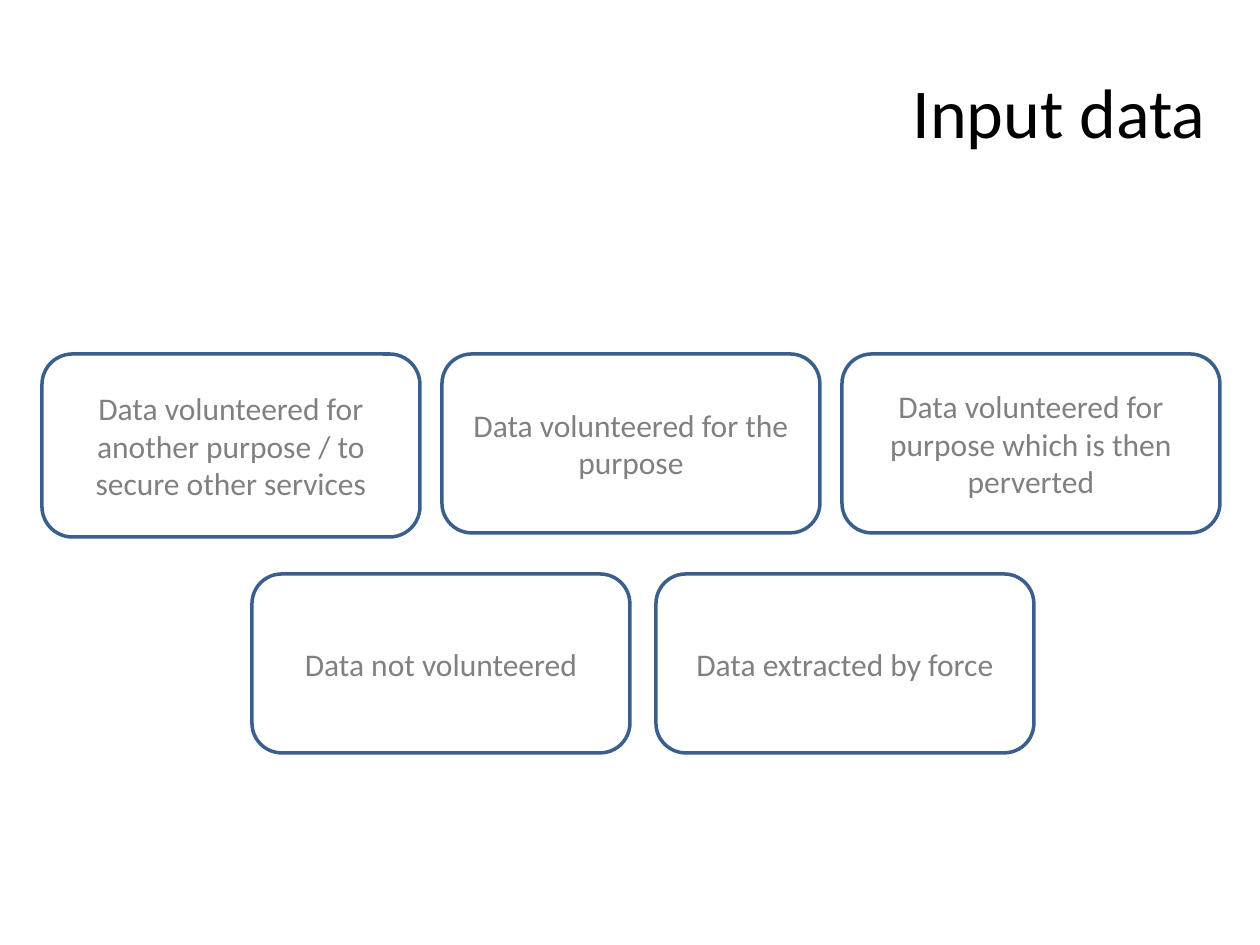
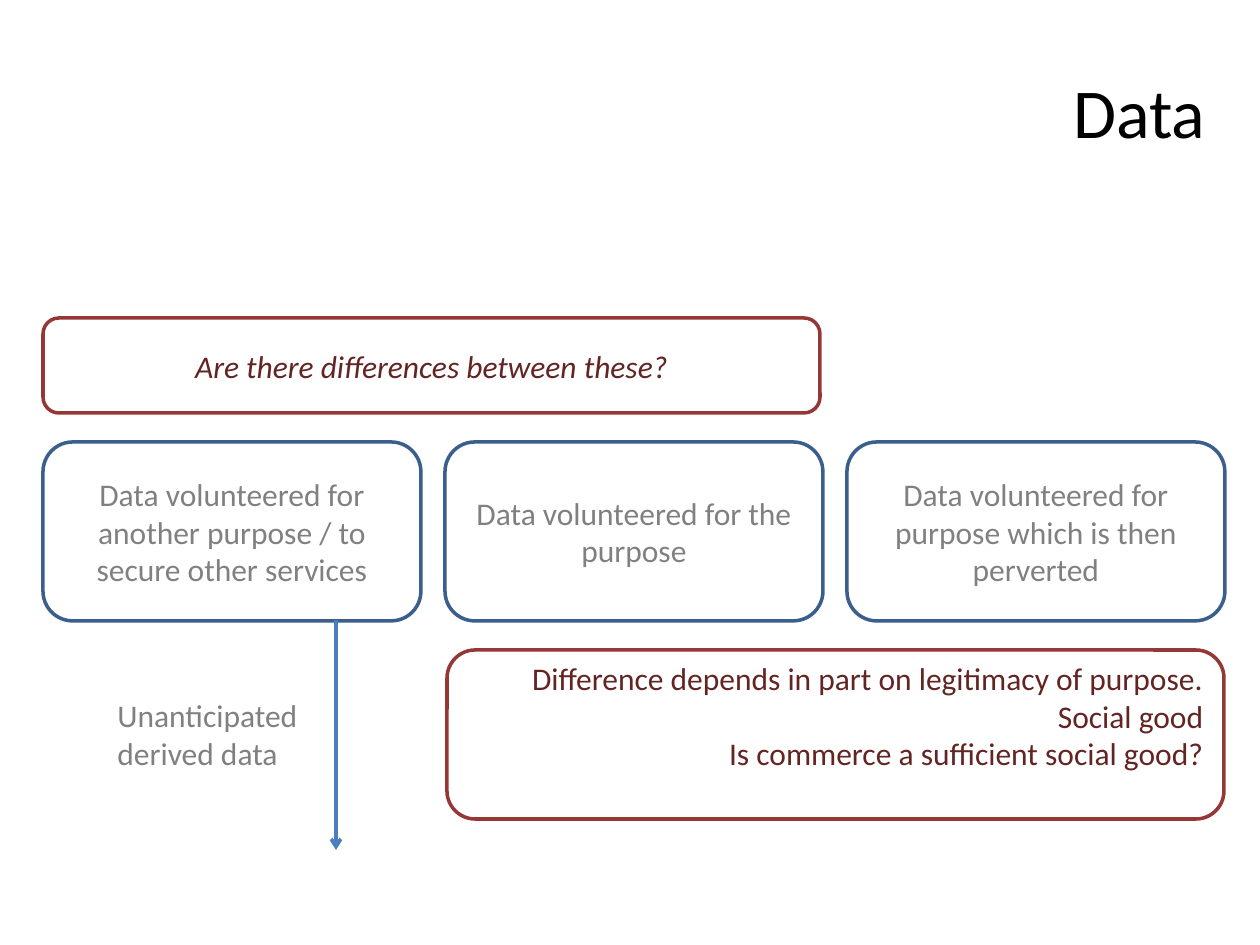
from lxml import etree
from pptx import Presentation
from pptx.dml.color import RGBColor
from pptx.enum.shapes import MSO_CONNECTOR, MSO_SHAPE
from pptx.enum.text import MSO_ANCHOR, PP_ALIGN
from pptx.oxml.ns import qn
from pptx.util import Pt

ROUNDED = MSO_SHAPE.ROUNDED_RECTANGLE
STRAIGHT = MSO_CONNECTOR.STRAIGHT
MIDDLE = MSO_ANCHOR.MIDDLE
LEFT, CENTER, RIGHT = PP_ALIGN.LEFT, PP_ALIGN.CENTER, PP_ALIGN.RIGHT

EMU_PER_INCH = 914400
PX_PER_INCH = 126
SLIDE_WIDTH, SLIDE_HEIGHT = 1260, 945
TITLE_ONLY = 5
FONT = "Calibri"
TITLE_RIGHT, TITLE_TOP, TITLE_HEIGHT = 1218, 32, 158
CARD_WIDTH, CARD_HEIGHT = 378, 179
COLORS = {
    "title": "000000",
    "card_line": "3A5F8C",
    "card_text": "808080",
    "remark_line": "953735",
    "remark_text": "632523",
    "arrow": "4B7EBC",
}
VOLUNTEERED = [
    "Data volunteered for another purpose / to secure other services",
    "Data volunteered for the purpose",
    "Data volunteered for purpose which is then perverted",
]


def px(length):
    return round(length * EMU_PER_INCH / PX_PER_INCH)


def color(name):
    return RGBColor.from_string(COLORS[name])


def write(text_frame, lines, color_name, align, size=18, italic=False):
    text_frame.text = "\n".join(lines)
    text_frame.word_wrap = True
    for paragraph in text_frame.paragraphs:
        paragraph.alignment = align
        font = paragraph.font
        font.name = FONT
        font.size = Pt(size)
        font.italic = italic
        font.color.rgb = color(color_name)


def add_titled_slide(presentation, title, title_left):
    slide = presentation.slides.add_slide(presentation.slide_layouts[TITLE_ONLY])
    shape = slide.shapes.title
    shape.left, shape.top = px(title_left), px(TITLE_TOP)
    shape.width, shape.height = px(TITLE_RIGHT - title_left), px(TITLE_HEIGHT)
    write(shape.text_frame, [title], "title", RIGHT, size=40)
    shape.text_frame.vertical_anchor = MIDDLE
    return slide


def add_box(slide, box, lines, style, align=CENTER, italic=False):
    shape = slide.shapes.add_shape(ROUNDED, *map(px, box))
    shape.shadow.inherit = False
    shape.fill.background()
    shape.line.color.rgb = color(style + "_line")
    shape.line.width = Pt(2)
    write(shape.text_frame, lines, style + "_text", align, italic=italic)
    shape.text_frame.vertical_anchor = MIDDLE
    return shape


def add_card_row(slide, left, top, pitch, texts):
    return [
        add_box(slide, (left + index * pitch, top, CARD_WIDTH, CARD_HEIGHT), [text], "card")
        for index, text in enumerate(texts)
    ]


def add_down_arrow(slide, x, top, bottom):
    arrow = slide.shapes.add_connector(STRAIGHT, px(x), px(top), px(x), px(bottom))
    arrow.line.color.rgb = color("arrow")
    arrow.line.width = Pt(2)
    etree.SubElement(arrow.line._get_or_add_ln(), qn("a:tailEnd"), type="arrow")
    etree.SubElement(arrow._element.spPr, qn("a:effectLst"))


def add_derived_data(slide, box):
    left, top, width, height = box
    add_down_arrow(slide, left + width, top, top + height)
    label = slide.shapes.add_textbox(px(left), px(top + 70), px(width - 21), px(89))
    write(label.text_frame, ["Unanticipated derived data"], "card_text", LEFT)


def build_input_data(presentation):
    slide = add_titled_slide(presentation, "Input data", 84)
    cards = add_card_row(slide, 42, 354, 400, VOLUNTEERED)
    cards[0].height = px(CARD_HEIGHT + 4)
    add_card_row(slide, 252, 574, 404, ["Data not volunteered", "Data extracted by force"])


def build_data(presentation):
    slide = add_titled_slide(presentation, "Data", 63)
    add_box(slide, (43, 318, 777, 95), ["Are there differences between these?"],
            "remark", italic=True)
    add_card_row(slide, 43, 442, 402, VOLUNTEERED)
    verdict = add_box(slide, (447, 650, 777, 169), [
        "Difference depends in part on legitimacy of purpose.",
        "Social good",
        "Is commerce a sufficient social good?",
    ], "remark", align=RIGHT)
    verdict.text_frame.margin_bottom = px(44)
    add_derived_data(slide, (105, 620, 231, 230))


def main():
    presentation = Presentation()
    presentation.slide_width = px(SLIDE_WIDTH)
    presentation.slide_height = px(SLIDE_HEIGHT)
    build_input_data(presentation)
    build_data(presentation)
    presentation.save("out.pptx")


if __name__ == "__main__":
    main()
